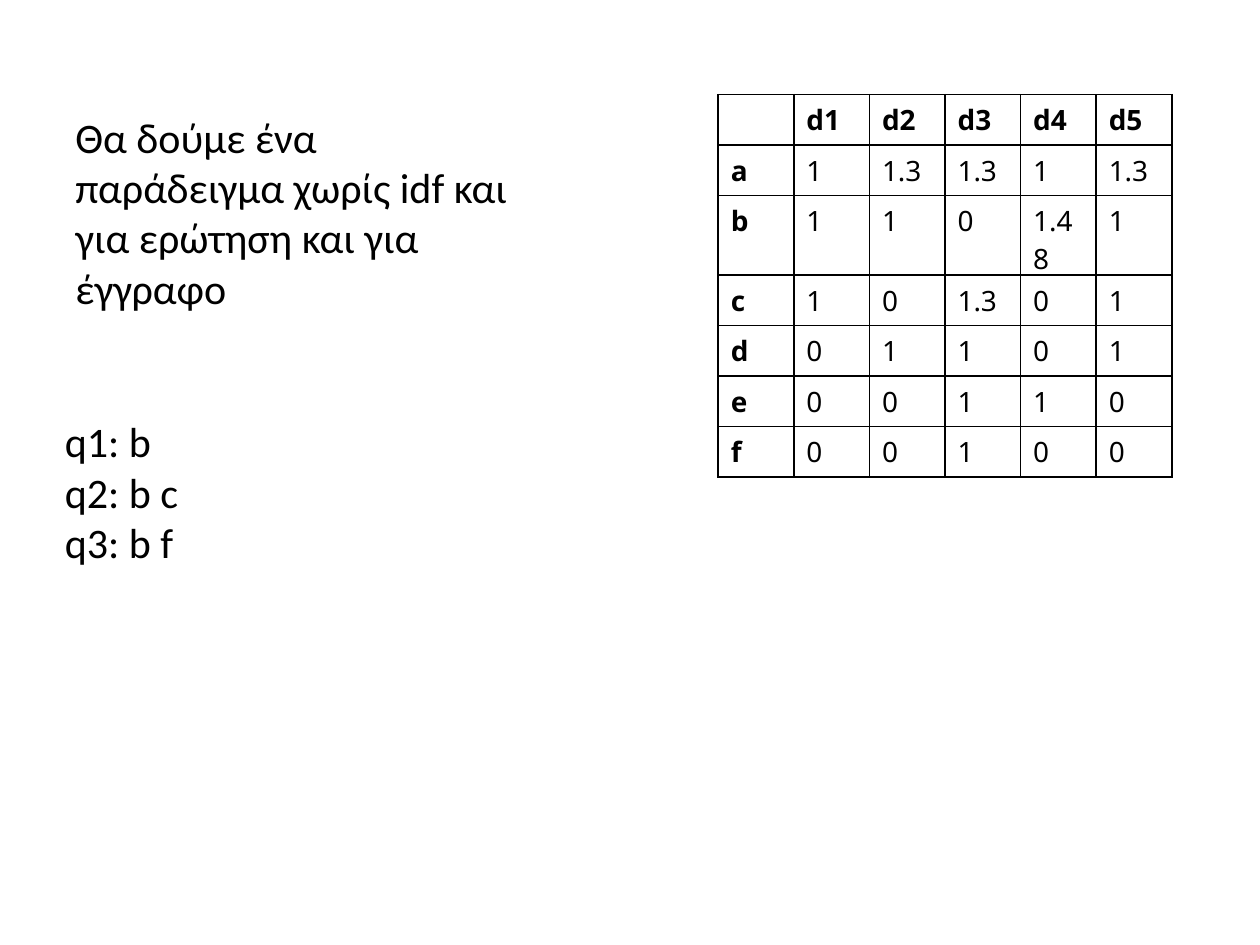
from lxml import etree
from pptx import Presentation
from pptx.dml.color import RGBColor
from pptx.enum.text import MSO_AUTO_SIZE
from pptx.oxml.ns import qn
from pptx.util import Pt

FIT_SHAPE = MSO_AUTO_SIZE.SHAPE_TO_FIT_TEXT
COLORS = {"text": "000000", "border": "000000"}

TEXTS = [
    (36, 60, 264, 124, ["Θα δούμε ένα παράδειγμα χωρίς idf και για ερώτηση και για έγγραφο"]),
    (30, 234, 180, 124, ["q1: b", "q2: b c", "q3: b f"]),
]
WEIGHTS = [
    ["", "d1", "d2", "d3", "d4", "d5"],
    ["a", "1", "1.3", "1.3", "1", "1.3"],
    ["b", "1", "1", "0", "1.48", "1"],
    ["c", "1", "0", "1.3", "0", "1"],
    ["d", "0", "1", "1", "0", "1"],
    ["e", "0", "0", "1", "1", "0"],
    ["f", "0", "0", "1", "0", "0"],
]
COL_WIDTH, ROW_HEIGHT = 43.2, 28.8


def style_font(font, name, size, bold=False):
    font.name = name
    font.size = Pt(size)
    font.bold = bold
    font.color.rgb = RGBColor.from_string(COLORS["text"])


def add_borders(cell):
    tcPr = cell._tc.get_or_add_tcPr()
    for side in ("lnL", "lnR", "lnT", "lnB"):
        ln = etree.SubElement(tcPr, qn(f"a:{side}"), w=str(Pt(1)))
        fill = etree.SubElement(ln, qn("a:solidFill"))
        etree.SubElement(fill, qn("a:srgbClr"), val=COLORS["border"])


prs = Presentation()
prs.slide_width, prs.slide_height = Pt(720), Pt(540)
s = prs.slides.add_slide(prs.slide_layouts[6])

for left, top, width, height, lines in TEXTS:
    tf = s.shapes.add_textbox(Pt(left), Pt(top), Pt(width), Pt(height)).text_frame
    tf.word_wrap = True
    tf.auto_size = FIT_SHAPE
    tf.text = "\n".join(lines)
    for p in tf.paragraphs:
        style_font(p.runs[0].font, "Calibri", 24)

n_rows, n_cols = len(WEIGHTS), len(WEIGHTS[0])
table = s.shapes.add_table(n_rows, n_cols, Pt(410.4), Pt(54),
                           Pt(COL_WIDTH * n_cols), Pt(ROW_HEIGHT * n_rows)).table
table.first_row = False
table.horz_banding = False
for col in table.columns:
    col.width = Pt(COL_WIDTH)
for i, values in enumerate(WEIGHTS):
    table.rows[i].height = Pt(ROW_HEIGHT)
    for j, value in enumerate(values):
        cell = table.cell(i, j)
        add_borders(cell)
        cell.fill.background()
        cell.text = value
        for r in cell.text_frame.paragraphs[0].runs:
            style_font(r.font, "Noto Sans", 16, bold=i == 0 or j == 0)

prs.save("out.pptx")
